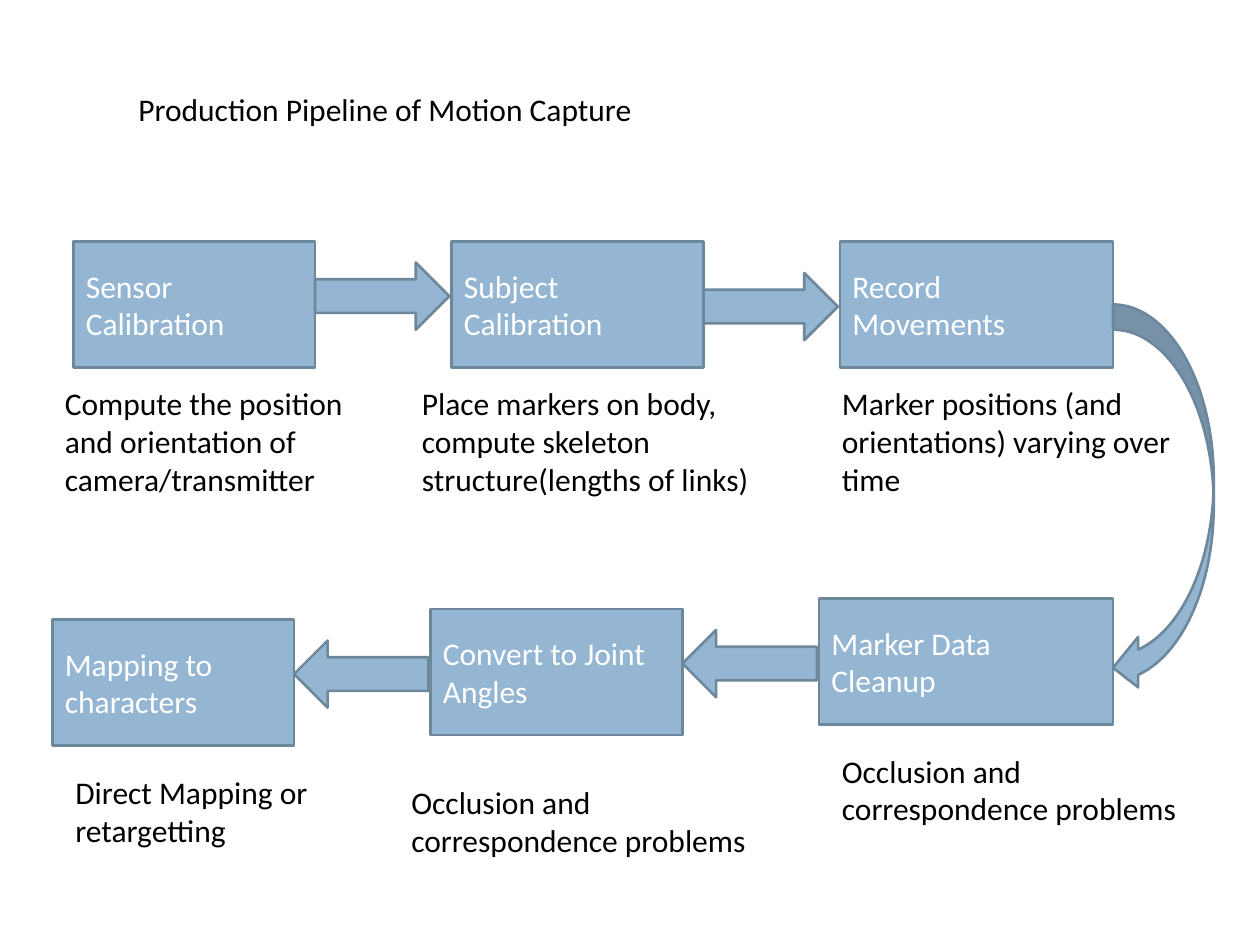
from pptx import Presentation
from pptx.dml.color import RGBColor
from pptx.enum.shapes import MSO_SHAPE as SHAPE
from pptx.enum.text import MSO_ANCHOR as ANCHOR, MSO_AUTO_SIZE as AUTO_SIZE, PP_ALIGN as ALIGN
from pptx.util import Inches, Pt

presentation = Presentation()
presentation.slide_width, presentation.slide_height = Inches(10), Inches(7.5)
slide = presentation.slides.add_slide(presentation.slide_layouts[6])

# Grid of 120 columns by 90 rows
COLUMN = presentation.slide_width / 120
ROW = presentation.slide_height / 90
BOX_ROWS = 12
ARROW_COLUMNS, ARROW_ROWS = 12.8, 6.4


def write(shape, text, color):
    frame = shape.text_frame
    frame.word_wrap = True
    frame.text = text
    paragraph = frame.paragraphs[0]
    paragraph.alignment = ALIGN.LEFT
    font = paragraph.runs[0].font
    font.name, font.size = "Calibri", Pt(18)
    font.color.rgb = RGBColor.from_string(color)


def add_part(kind, column, row, columns, rows, text="", color="000000"):
    place = (round(column * COLUMN), round(row * ROW),
             round(columns * COLUMN), round(rows * ROW))
    if kind is None:
        shape = slide.shapes.add_textbox(*place)
        shape.text_frame.auto_size = AUTO_SIZE.SHAPE_TO_FIT_TEXT
    else:
        shape = slide.shapes.add_shape(kind, *place)
        shape.shadow.inherit = False
        shape.fill.solid()
        shape.fill.fore_color.rgb = RGBColor.from_string("94B6D2")
        shape.line.color.rgb = RGBColor.from_string("6D879B")
        shape.line.width = Pt(1.5)
        shape.text_frame.vertical_anchor = ANCHOR.MIDDLE
    if text:
        write(shape, text, color)


# Title
add_part(None, 12, 8, 77, 4.8, "Production Pipeline of Motion Capture")

# Pipeline steps: column, row, width, name
steps = [
    (7, 23, 23, "Sensor Calibration"),
    (43, 23, 24, "Subject Calibration"),
    (80, 23, 26, "Record Movements"),
    (78, 57, 28, "Marker Data Cleanup"),
    (41, 58, 24, "Convert to Joint Angles"),
    (5, 59, 23, "Mapping to characters"),
]
for column, row, columns, name in steps:
    add_part(SHAPE.RECTANGLE, column, row, columns, BOX_ROWS, name, "FFFFFF")

# Arrows between the steps of each line
arrows = [
    (SHAPE.RIGHT_ARROW, 30, 25),
    (SHAPE.RIGHT_ARROW, 67, 26),
    (SHAPE.LEFT_ARROW, 65, 60),
    (SHAPE.LEFT_ARROW, 28, 61),
]
for kind, column, row in arrows:
    add_part(kind, column, row, ARROW_COLUMNS, ARROW_ROWS)

# Turn from the upper line to the lower one
add_part(SHAPE.CURVED_LEFT_ARROW, 106, 29, 9.6, 37)

# Explanations below the steps: column, row, width, height, text
notes = [
    (5, 36, 31, 12.1, "Compute the position and orientation of camera/transmitter"),
    (39, 36, 35, 15.7, "Place markers on body, compute skeleton structure(lengths of links)"),
    (79, 36, 36, 12.1, "Marker positions (and orientations) varying over time"),
    (79, 71, 36, 8.5, "Occlusion and correspondence problems"),
    (38, 74, 37, 8.5, "Occlusion and correspondence problems"),
    (6, 73, 28, 8.5, "Direct Mapping or retargetting"),
]
for column, row, columns, rows, text in notes:
    add_part(None, column, row, columns, rows, text)

presentation.save("out.pptx")
